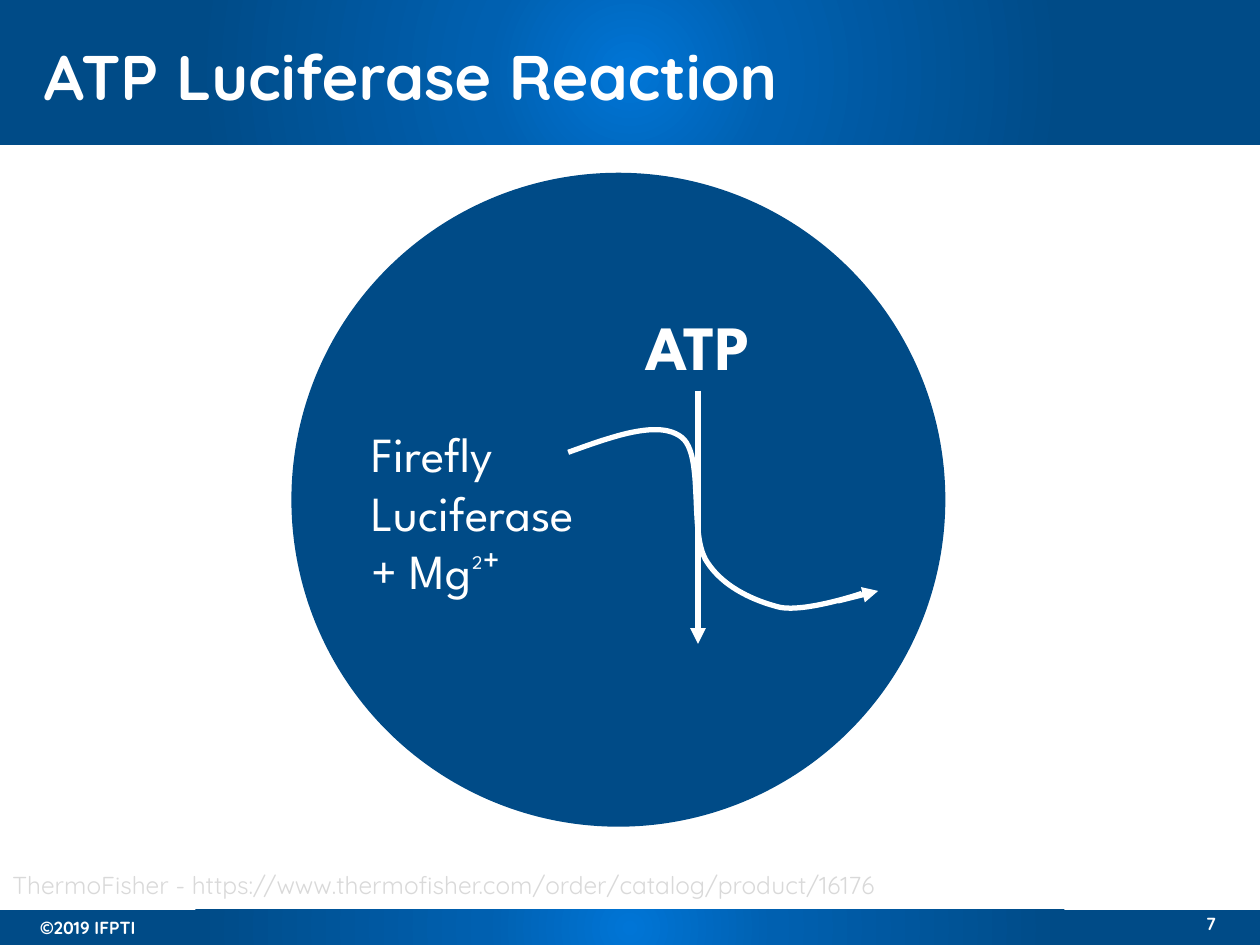
"""Build the ATP luciferase reaction slide."""
from dataclasses import dataclass

import pptx
import pptx.dml.color
import pptx.enum.shapes
import pptx.enum.text
import pptx.oxml
import pptx.oxml.ns
import pptx.util

Pt = pptx.util.Pt
RGBColor = pptx.dml.color.RGBColor
MSO_SHAPE = pptx.enum.shapes.MSO_SHAPE
PP_ALIGN = pptx.enum.text.PP_ALIGN
MSO_ANCHOR = pptx.enum.text.MSO_ANCHOR
MSO_AUTO_SIZE = pptx.enum.text.MSO_AUTO_SIZE

WHITE = RGBColor(0xFF, 0xFF, 0xFF)
GRAY = RGBColor(0xD9, 0xD9, 0xD9)
NAVY = RGBColor(0x00, 0x4B, 0x87)
BLUE = RGBColor(0x00, 0x60, 0xB0)
AZURE = RGBColor(0x00, 0x75, 0xD6)
GLOW = ((0, AZURE), (23, BLUE), (69, NAVY), (97, NAVY))

BODY = "Quicksand"
DIAGRAM = "League Spartan"
STROKE = 3
CURVE_STEPS = 24


@dataclass
class Box:
    left: float
    top: float
    width: float
    height: float

    def emu(self) -> tuple:
        return tuple(Pt(v) for v in (self.left, self.top, self.width, self.height))


@dataclass
class Label:
    lines: tuple
    box: Box
    font: dict
    align: PP_ALIGN = PP_ALIGN.LEFT
    anchor: MSO_ANCHOR = MSO_ANCHOR.TOP
    wrap: bool = True
    auto_size: MSO_AUTO_SIZE = MSO_AUTO_SIZE.SHAPE_TO_FIT_TEXT


BANDS = (Box(0, 0, 720, 82.8), Box(0, 519.84, 720, 20.88))
CELL = Box(166.5, 98.7, 373.68, 373.68)

SMALL = {"size": Pt(10), "name": BODY, "bold": True}
LABELS = (
    Label(("©2019 IFPTI",), Box(15.84, 520.56, 95.76, 19.44), SMALL),
    Label(("7",), Box(632.88, 518.4, 69.12, 19.44), SMALL, PP_ALIGN.RIGHT),
    Label(("ATP Luciferase Reaction",), Box(18, 9.36, 671.04, 67.68),
          {"size": Pt(36), "name": BODY, "bold": True},
          anchor=MSO_ANCHOR.MIDDLE, auto_size=MSO_AUTO_SIZE.NONE),
    Label(("ThermoFisher - https://www.thermofisher.com/order/catalog/product/16176",),
          Box(0, 493.92, 720, 24.48), {"size": Pt(14), "name": BODY, "color": GRAY}),
    Label(("Firefly", "Luciferase", "+ Mg²⁺"), Box(205.2, 238.32, 153.36, 108.72),
          {"size": Pt(28), "name": DIAGRAM}, wrap=False),
)
ATP = Label(("ATP",), Box(347.76, 172.08, 102.24, 51.12),
            {"size": Pt(36), "name": DIAGRAM, "bold": True}, PP_ALIGN.CENTER)

CURVE_START = (324.72, 258.48)
CURVE = (
    ((350.64, 249.12), (376.56, 239.76), (389.52, 249.84)),
    ((402.48, 259.92), (393.84, 303.12), (403.2, 319.68)),
    ((412.56, 335.52), (431.28, 343.44), (445.68, 347.04)),
    ((460.8, 349.92), (492.48, 339.12), (492.48, 339.12)),
)


def add_shape(s, kind: MSO_SHAPE, box: Box):
    sp = s.shapes.add_shape(kind, *box.emu())
    sp.shadow.inherit = False
    sp.line.fill.background()
    return sp


def add_band(s, box: Box) -> None:
    sp = add_shape(s, MSO_SHAPE.RECTANGLE, box)
    sp.fill.background()
    stops = "".join(f'<a:gs pos="{pos * 1000}"><a:srgbClr val="{color}"/></a:gs>'
                    for pos, color in GLOW)
    grad = pptx.oxml.parse_xml(
        f'<a:gradFill {pptx.oxml.ns.nsdecls("a")} rotWithShape="1">'
        f'<a:gsLst>{stops}</a:gsLst><a:path path="circle">'
        '<a:fillToRect l="50000" t="50000" r="50000" b="50000"/></a:path></a:gradFill>')
    no_fill = sp.element.spPr.find(pptx.oxml.ns.qn("a:noFill"))
    sp.element.spPr.replace(no_fill, grad)


def add_label(s, label: Label):
    sp = s.shapes.add_textbox(*label.box.emu())
    tf = sp.text_frame
    frame = {"word_wrap": label.wrap, "auto_size": label.auto_size,
             "vertical_anchor": label.anchor}
    for key, value in frame.items():
        setattr(tf, key, value)
    for i, line in enumerate(label.lines):
        p = tf.add_paragraph() if i else tf.paragraphs[0]
        p.alignment = label.align
        r = p.add_run()
        r.text = line
        r.font.color.rgb = label.font.get("color", WHITE)
        for key, value in label.font.items():
            if key != "color":
                setattr(r.font, key, value)
    return sp


def set_stroke(sp) -> None:
    sp.line.color.rgb = WHITE
    sp.line.width = Pt(STROKE)


def add_arrow(s, start: tuple, end: tuple):
    cxn = s.shapes.add_connector(pptx.enum.shapes.MSO_CONNECTOR.STRAIGHT,
                                 *(Pt(v) for v in start + end))
    set_stroke(cxn)
    ns = pptx.oxml.ns.nsdecls("a")
    cxn.line._get_or_add_ln().append(
        pptx.oxml.parse_xml(f'<a:tailEnd {ns} type="triangle"/>'))
    cxn.element.spPr.append(pptx.oxml.parse_xml(f"<a:effectLst {ns}/>"))
    return cxn


def bezier(a: tuple, b: tuple, c: tuple, d: tuple, t: float) -> tuple:
    u = 1 - t
    return tuple(Pt(u**3 * w + 3 * u * u * t * x + 3 * u * t * t * y + t**3 * z)
                 for w, x, y, z in zip(a, b, c, d))


def add_curve(s, start: tuple, segments: tuple) -> None:
    points, last = [], start
    for b, c, d in segments:
        points += [bezier(last, b, c, d, i / CURVE_STEPS)
                   for i in range(1, CURVE_STEPS + 1)]
        last = d
    builder = s.shapes.build_freeform(*(Pt(v) for v in start))
    builder.add_line_segments(points, close=False)
    sp = builder.convert_to_shape()
    sp.shadow.inherit = False
    sp.fill.background()
    set_stroke(sp)


def main() -> None:
    prs = pptx.Presentation()
    prs.slide_width, prs.slide_height = Pt(720), Pt(540)
    s = prs.slides.add_slide(prs.slide_layouts[6])
    for band in BANDS:
        add_band(s, band)
    cell = add_shape(s, MSO_SHAPE.OVAL, CELL)
    cell.fill.solid()
    cell.fill.fore_color.rgb = NAVY
    for label in LABELS:
        add_label(s, label)
    atp = add_label(s, ATP)
    add_arrow(s, (398.88, 223.2), (398.88, 367.92)).begin_connect(atp, 2)
    add_curve(s, CURVE_START, CURVE)
    add_arrow(s, (478.8, 343.44), (501.84, 337.68))
    prs.save("out.pptx")


if __name__ == "__main__":
    main()
